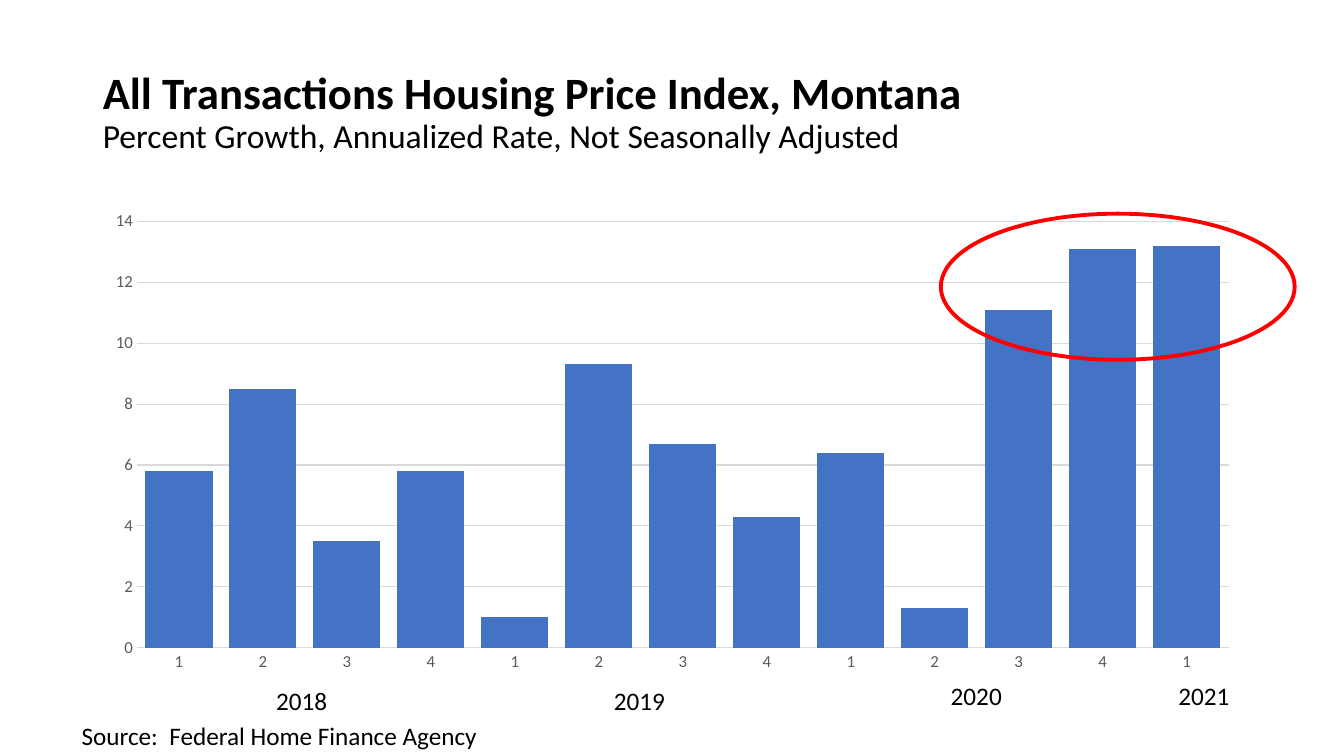
import pptx
import pptx.chart.data
import pptx.dml.color
import pptx.enum.chart
import pptx.enum.shapes
import pptx.enum.text
import pptx.util

COLORS = {"text": "000000", "axis": "595959", "grid": "D9D9D9",
          "bar": "4472C4", "highlight": "FF0000"}
FONT = "Calibri"


def color(name):
    return pptx.dml.color.RGBColor.from_string(COLORS[name])


class SlideBuilder:
    """Places elements on a grid of 100 columns by 100 rows."""

    def __init__(self, presentation):
        self.column = presentation.slide_width / 100
        self.row = presentation.slide_height / 100
        self.slide = presentation.slides.add_slide(presentation.slide_layouts[5])

    def box(self, left, top, width, height):
        return (round(left * self.column), round(top * self.row),
                round(width * self.column), round(height * self.row))

    def style(self, font, size, color_name="text"):
        font.name = FONT
        font.size = pptx.util.Pt(size)
        font.color.rgb = color(color_name)

    def title(self, heading, subtitle, *place):
        shape = self.slide.shapes.title
        shape.left, shape.top, shape.width, shape.height = self.box(*place)
        frame = shape.text_frame
        frame.auto_size = pptx.enum.text.MSO_AUTO_SIZE.NONE
        frame.vertical_anchor = pptx.enum.text.MSO_ANCHOR.MIDDLE
        paragraph = frame.paragraphs[0]
        paragraph.alignment = pptx.enum.text.PP_ALIGN.LEFT
        paragraph.line_spacing = 0.9
        for text, size, bold in ((heading, 32, True), (subtitle, 24, False)):
            if paragraph.runs:
                paragraph.add_line_break()
            run = paragraph.add_run()
            run.text = text
            self.style(run.font, size)
            run.font.bold = bold

    def label(self, text, *place):
        frame = self.slide.shapes.add_textbox(*self.box(*place)).text_frame
        frame.word_wrap = True
        frame.auto_size = pptx.enum.text.MSO_AUTO_SIZE.SHAPE_TO_FIT_TEXT
        paragraph = frame.paragraphs[0]
        paragraph.text = text
        self.style(paragraph.font, 18)

    def column_chart(self, categories, values, *place):
        data = pptx.chart.data.CategoryChartData()
        data.categories = categories
        data.add_series("Series 1", values)
        chart = self.slide.shapes.add_chart(
            pptx.enum.chart.XL_CHART_TYPE.COLUMN_CLUSTERED,
            *self.box(*place), data).chart
        chart.has_legend = False
        chart.has_title = False
        self.style(chart.font, 10)

        # Bars
        plot = chart.plots[0]
        plot.gap_width = 25
        plot.overlap = -78
        plot.vary_by_categories = False
        fill = plot.series[0].format.fill
        fill.solid()
        fill.fore_color.rgb = color("bar")

        # Axes and gridlines
        for axis in (chart.category_axis, chart.value_axis):
            axis.major_tick_mark = pptx.enum.chart.XL_TICK_MARK.NONE
            axis.minor_tick_mark = pptx.enum.chart.XL_TICK_MARK.NONE
            self.style(axis.tick_labels.font, 12, "axis")
        chart.value_axis.minimum_scale = 0
        chart.value_axis.maximum_scale = 14
        chart.value_axis.major_unit = 2
        chart.value_axis.format.line.fill.background()
        for line in (chart.category_axis.format.line,
                     chart.value_axis.major_gridlines.format.line):
            line.color.rgb = color("grid")
            line.width = pptx.util.Pt(0.75)

    def ring(self, *place):
        shape = self.slide.shapes.add_shape(
            pptx.enum.shapes.MSO_SHAPE.OVAL, *self.box(*place))
        shape.shadow.inherit = False
        shape.fill.background()
        shape.line.color.rgb = color("highlight")
        shape.line.width = pptx.util.Pt(2.75)


def main():
    presentation = pptx.Presentation()
    presentation.slide_width = pptx.util.Inches(13.33)
    presentation.slide_height = pptx.util.Inches(7.5)
    builder = SlideBuilder(presentation)

    builder.title("All Transactions Housing Price Index, Montana",
                  "Percent Growth, Annualized Rate, Not Seasonally Adjusted",
                  6.9, 5.33, 86.25, 19.33)

    # Quarterly growth, first quarter of 2018 to first quarter of 2021
    growth = (5.8, 8.5, 3.5, 5.8, 1, 9.3, 6.7, 4.3, 6.4, 1.3, 11.1, 13.1, 13.2)
    quarters = [str(index % 4 + 1) for index in range(len(growth))]
    builder.column_chart(quarters, growth, 6.9, 26.67, 86.25, 63.47)

    # Years under the quarters, and the source
    for year, left, top in (("2018", 19.8, 90), ("2019", 44.93, 90),
                            ("2020", 70, 89.33), ("2021", 86.93, 89.33)):
        builder.label(year, left, top, 8.1, 5.33)
    builder.label("Source:  Federal Home Finance Agency", 5.33, 94.67, 33.9, 5.33)

    # Highlight of the last three quarters
    builder.ring(70, 28.27, 26.33, 19.33)

    presentation.save("out.pptx")


if __name__ == "__main__":
    main()
